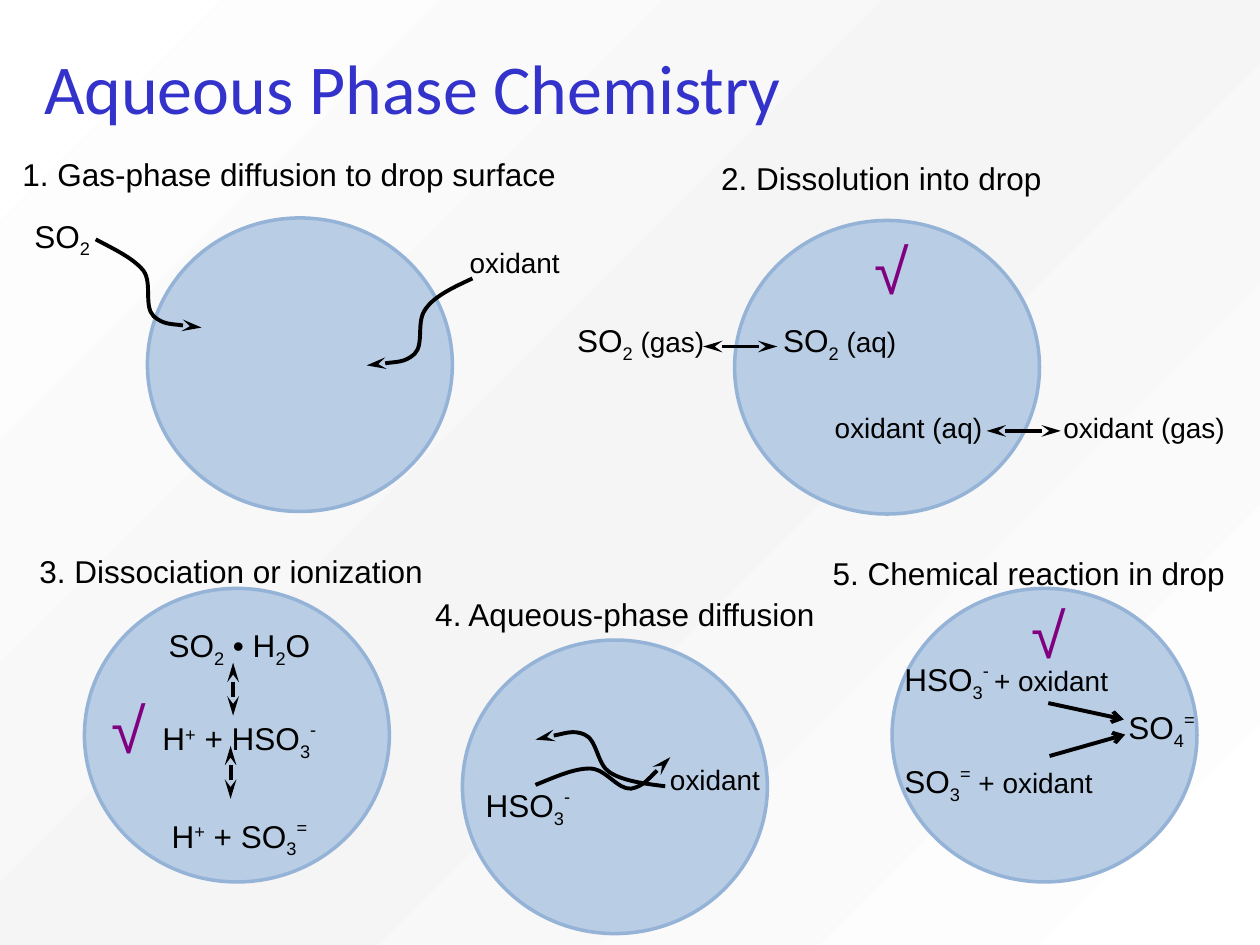
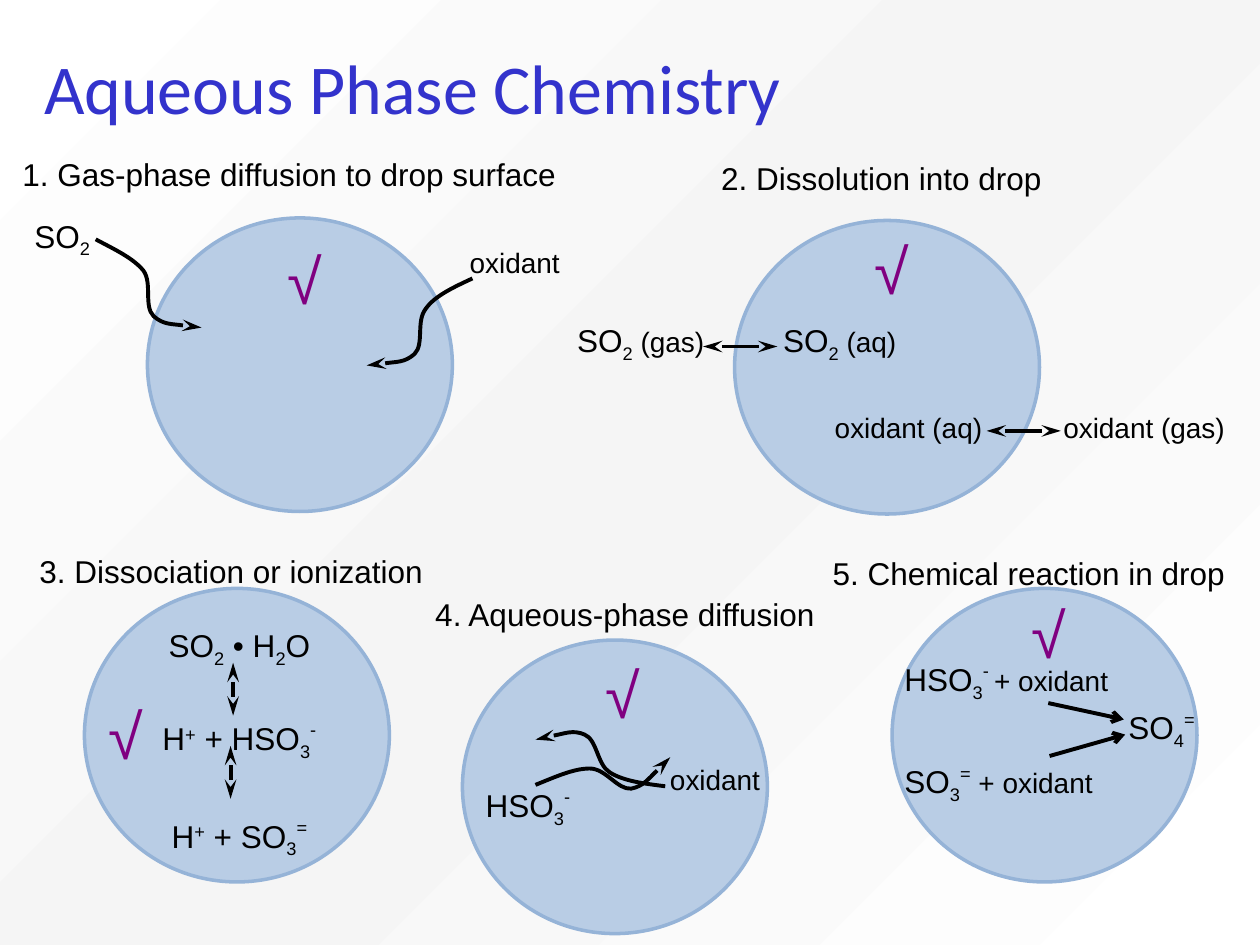
"""Build two slides on the steps of aqueous phase chemistry in a cloud drop."""
from copy import deepcopy

from lxml.etree import SubElement
from pptx import Presentation
from pptx.dml.color import RGBColor
from pptx.enum.shapes import MSO_CONNECTOR as CONNECTOR, MSO_SHAPE as SHAPE
from pptx.enum.text import MSO_ANCHOR as ANCHOR, PP_ALIGN as ALIGN
from pptx.oxml.ns import qn
from pptx.util import Inches, Pt

rgb = RGBColor.from_string
BLACK, TITLE_BLUE, CHECK_PURPLE = "000000", "3333CC", "800080"
DROP_FILL, DROP_EDGE = "B9CDE5", "95B3D7"
DROP_SIZE = Inches(2.42), Inches(2.33)
RAISED = {"+": 30, "-": 46, "=": 42}
HEAD_LENGTH = {"stealth": "lg", "arrow": "med"}

drops = [(0.67, 4.67), (7.08, 4.67), (1.17, 1.73), (5.83, 1.75), (3.67, 5.08)]

labels = [
    (-0.08, 1.18, 4.75, "1. Gas-phase diffusion to drop surface"),
    (5.58, 1.21, 2.83, "2. Dissolution into drop"),
    (0, 4.33, 3.67, "3. Dissociation or ionization"),
    (3.25, 4.67, 3.42, "4. Aqueous-phase diffusion"),
    (6.33, 4.35, 3.67, "5. Chemical reaction in drop"),
    (0.08, 1.67, 0.83, "SO|_2"),
    (3.5, 1.9, 1.17, "~oxidant"),
    (4.42, 2.5, 1.33, "SO|_2|~ (gas)"),
    (6, 2.5, 1.33, "SO|_2|~ (aq)"),
    (8.33, 3.21, 1.5, "~oxidant (gas)"),
    (6.5, 3.21, 1.42, "~oxidant (aq)"),
    (3.71, 6.18, 0.96, "HSO|_3|^-"),
    (5.09, 6, 1.17, "~oxidant"),
]
ionization = [
    ("SO|_2| • H|_2|O", ALIGN.CENTER, 0, 3),
    ("H|^+| + HSO|_3|^-", ALIGN.CENTER, 25, 3),
    ("H|^+| + SO|_3|^=", ALIGN.CENTER, 28, 6),
]
reaction = [
    ("HSO|_3|^- |~+ oxidant", ALIGN.LEFT, 0, 3),
    ("SO|_4|^=", ALIGN.RIGHT, 0, 6),
    ("SO|_3|^=|~ + oxidant", ALIGN.LEFT, 0, 6),
]
arrows = [
    (1.85, 5.68, 1.85, 5.26, "stealth", "stealth"),
    (1.83, 6.34, 1.83, 5.92, "stealth", "stealth"),
    (5.58, 2.75, 6.17, 2.75, "stealth", "stealth"),
    (7.83, 3.42, 8.42, 3.42, "stealth", "stealth"),
    (8.32, 5.58, 8.92, 5.71, None, "arrow"),
    (8.33, 6, 8.93, 5.83, None, "arrow"),
]
diffusion_curves = [
    [(0.76, 1.9), (0.91, 1.98), (1.06, 2.05), (1.14, 2.15), (1.21, 2.25),
     (1.14, 2.43), (1.22, 2.51), (1.3, 2.58), (1.6, 2.6), (1.6, 2.6)],
    [(3.75, 2.21), (3.6, 2.28), (3.45, 2.35), (3.38, 2.45), (3.3, 2.55),
     (3.37, 2.73), (3.29, 2.81), (3.21, 2.88), (2.91, 2.9), (2.91, 2.9)],
    [(4.25, 6.23), (4.4, 6.17), (4.55, 6.1), (4.68, 6.1), (4.81, 6.1),
     (4.9, 6.27), (5.01, 6.26), (5.11, 6.24), (5.32, 6.01), (5.32, 6.01)],
    [(5.28, 6.24), (5.12, 6.22), (4.95, 6.2), (4.84, 6.13), (4.74, 6.07),
     (4.74, 5.87), (4.64, 5.83), (4.55, 5.79), (4.25, 5.87), (4.25, 5.87)],
]
checks_by_slide = [
    [(6.84, 1.79), (0.79, 5.43), (8.09, 4.68)],
    [(8.09, 4.68), (6.84, 1.79), (2.18, 1.87), (0.76, 5.48), (4.71, 5.15)],
]


def write(slide, left, top, width, height, lines, size=18, color=BLACK):
    """Write formulas whose runs are parted by | and marked _ low, ^ high or ~ small."""
    frame = slide.shapes.add_textbox(
        Inches(left), Inches(top), Inches(width), Inches(height)).text_frame
    frame.word_wrap = True
    for number, (formula, align, before, after) in enumerate(lines):
        paragraph = frame.add_paragraph() if number else frame.paragraphs[0]
        paragraph.alignment = align
        paragraph.space_before, paragraph.space_after = Pt(before), Pt(after)
        for part in formula.split("|"):
            run = paragraph.add_run()
            run.text = part.lstrip("_^~")
            run.font.name = "Arial"
            run.font.size = Pt(16 if part[0] == "~" else size)
            run.font.color.rgb = rgb(color)
            if part[0] in "_^":
                baseline = -25 if part[0] == "_" else RAISED[part[1]]
                run.font._element.set("baseline", str(baseline * 1000))


def ink(stroke, head, tail):
    """Give a line or curve its black stroke and arrowheads."""
    stroke.line.color.rgb = rgb(BLACK)
    stroke.line.width = Pt(2.25)
    properties = stroke._element.spPr
    outline = properties.find(qn("a:ln"))
    for end, kind in (("a:headEnd", head), ("a:tailEnd", tail)):
        if kind:
            SubElement(outline, qn(end), type=kind, w="med", len=HEAD_LENGTH[kind])
    SubElement(properties, qn("a:effectLst"))


deck = Presentation()
deck.slide_width, deck.slide_height = Inches(10), Inches(7.5)

backdrop = deck.slide_master.background.fill
backdrop.gradient()
backdrop.gradient_angle = 315
stops = next(deck.slide_master.element.iter(qn("a:gsLst")))
stops.append(deepcopy(stops[-1]))
for stop, position, color in zip(
        backdrop.gradient_stops, (0, 0.5, 1), ("FFFFFF", "F5F5F5", "FFFFFF")):
    stop.position = position
    stop.color.rgb = rgb(color)

for checks in checks_by_slide:
    slide = deck.slides.add_slide(deck.slide_layouts[5])
    title = slide.shapes.title
    title.left, title.top = Inches(0.25), Inches(0.17)
    title.width, title.height = Inches(9), Inches(1.03)
    title.text_frame.text = "Aqueous Phase Chemistry"
    title.text_frame.vertical_anchor = ANCHOR.MIDDLE
    heading = title.text_frame.paragraphs[0]
    heading.alignment = ALIGN.LEFT
    heading.runs[0].font.name = "Calibri"
    heading.runs[0].font.size = Pt(40)
    heading.runs[0].font.color.rgb = rgb(TITLE_BLUE)

    for left, top in drops:
        drop = slide.shapes.add_shape(SHAPE.OVAL, Inches(left), Inches(top), *DROP_SIZE)
        drop.shadow.inherit = False
        drop.fill.solid()
        drop.fill.fore_color.rgb = rgb(DROP_FILL)
        drop.line.color.rgb = rgb(DROP_EDGE)
        drop.line.width = Pt(2)

    for left, top, width, formula in labels:
        write(slide, left, top, width, 0.4, [(formula, ALIGN.CENTER, 0, 0)])
    write(slide, 1.17, 4.92, 1.46, 1.83, ionization)
    write(slide, 7.08, 5.18, 2.5, 1.14, reaction)

    for x1, y1, x2, y2, head, tail in arrows:
        arrow = slide.shapes.add_connector(
            CONNECTOR.STRAIGHT, Inches(x1), Inches(y1), Inches(x2), Inches(y2))
        ink(arrow, head, tail)

    for points in diffusion_curves:
        start, *bends = [(Inches(x), Inches(y)) for x, y in points]
        builder = slide.shapes.build_freeform(*start)
        builder.add_line_segments(bends, close=False)
        curve = builder.convert_to_shape()
        segments = list(curve._element.iter(qn("a:lnTo")))
        for bend, *others in zip(segments[::3], segments[1::3], segments[2::3]):
            bend.tag = qn("a:cubicBezTo")
            for other in others:
                bend.append(other[0])
                other.getparent().remove(other)
        curve.fill.background()
        ink(curve, None, "stealth")

    for left, top in checks:
        write(slide, left, top, 0.4, 0.71, [("√", ALIGN.LEFT, 0, 0)], 36, CHECK_PURPLE)

deck.save("out.pptx")
